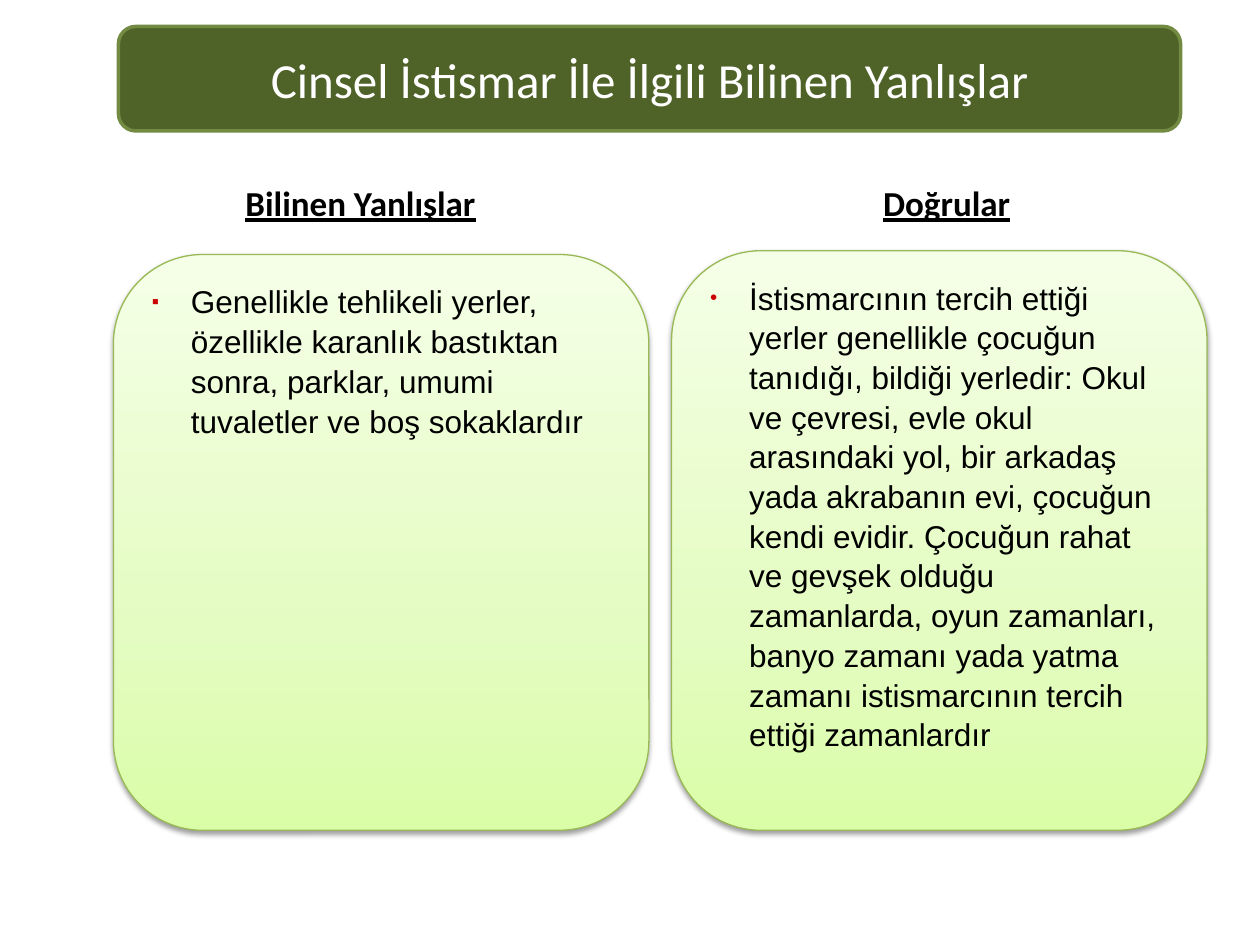
from pptx import Presentation
from pptx.dml.color import RGBColor
from pptx.enum.shapes import MSO_SHAPE as Shape
from pptx.enum.text import MSO_ANCHOR as Anchor, MSO_AUTO_SIZE as AutoSize, PP_ALIGN as Align
from pptx.oxml import parse_xml
from pptx.oxml.ns import nsdecls, qn
from pptx.util import Inches, Pt

COLORS = {
    "title_fill": "4F6228", "title_line": "738A42", "panel_line": "98B955",
    "white": "FFFFFF", "black": "000000", "bullet": "CC0000",
}
PANEL_STOPS = [(0, "DAFDA7"), (35, "E4FCC2"), (100, "F5FFE7")]


def rgb(name):
    return RGBColor.from_string(COLORS[name])


def write(shape, text, font_name, size, color):
    """Set the shape's single paragraph, format its run and return the paragraph."""
    shape.text_frame.text = text
    paragraph = shape.text_frame.paragraphs[0]
    font = paragraph.runs[0].font
    font.name, font.size = font_name, Pt(size)
    font.color.rgb = rgb(color)
    return paragraph


presentation = Presentation()
presentation.slide_width, presentation.slide_height = Inches(10), Inches(7.5)
slide = presentation.slides.add_slide(presentation.slide_layouts[6])

# Title bar
title = slide.shapes.add_shape(
    Shape.ROUNDED_RECTANGLE, Inches(0.94), Inches(0.21), Inches(8.43), Inches(0.83))
title.shadow.inherit = False
title.fill.solid()
title.fill.fore_color.rgb = rgb("title_fill")
title.line.color.rgb = rgb("title_line")
title.line.width = Pt(2)
title.text_frame.vertical_anchor = Anchor.MIDDLE
paragraph = write(title, "Cinsel İstismar İle İlgili Bilinen Yanlışlar", "Calibri", 28, "white")
paragraph.alignment = Align.CENTER

# Panels: left, top, height, bullet, space before the text, text
panels = [
    (0.9, 2.02, 4.57, "▪", 6,
     "Genellikle tehlikeli yerler, özellikle karanlık bastıktan sonra, parklar, "
     "umumi tuvaletler ve boş sokaklardır"),
    (5.33, 1.99, 4.6, "•", 3,
     "İstismarcının tercih ettiği yerler genellikle çocuğun tanıdığı, bildiği yerledir: "
     "Okul ve çevresi, evle okul arasındaki yol, bir arkadaş yada akrabanın evi, çocuğun "
     "kendi evidir. Çocuğun rahat ve gevşek olduğu zamanlarda, oyun zamanları, banyo "
     "zamanı yada yatma zamanı istismarcının tercih ettiği zamanlardır"),
]
for left, top, height, bullet, space_before, text in panels:
    panel = slide.shapes.add_shape(
        Shape.ROUNDED_RECTANGLE, Inches(left), Inches(top), Inches(4.25), Inches(height))
    panel.line.color.rgb = rgb("panel_line")
    panel.line.width = Pt(0.75)

    panel.fill.gradient()
    panel.fill.gradient_angle = 90
    stop_list = panel._element.spPr.find(qn("a:gradFill")).find(qn("a:gsLst"))
    for stop in list(stop_list):
        stop_list.remove(stop)
    for position, color in PANEL_STOPS:
        stop_list.append(parse_xml(
            f'<a:gs {nsdecls("a")} pos="{position * 1000}"><a:srgbClr val="{color}"/></a:gs>'))

    panel.shadow.inherit = False
    panel._element.spPr.find(qn("a:effectLst")).append(parse_xml(
        f'<a:outerShdw {nsdecls("a")} blurRad="{Pt(3.1)}" dist="{Pt(1.6)}" dir="5400000" '
        f'rotWithShape="0"><a:srgbClr val="{COLORS["black"]}"><a:alpha val="38000"/>'
        '</a:srgbClr></a:outerShdw>'))

    panel.text_frame.vertical_anchor = Anchor.TOP
    panel.text_frame.margin_top = 0
    paragraph = write(panel, text, "Arial", 18, "black")
    paragraph.alignment = Align.LEFT
    paragraph.line_spacing = 1.05
    paragraph.space_before = Pt(space_before)
    properties = paragraph._p.get_or_add_pPr()
    properties.set("marL", str(Inches(0.31)))
    properties.set("indent", str(-Inches(0.31)))
    for markup in (
        f'<a:buClr {nsdecls("a")}><a:srgbClr val="{COLORS["bullet"]}"/></a:buClr>',
        f'<a:buSzPct {nsdecls("a")} val="65000"/>',
        f'<a:buFont {nsdecls("a")} typeface="Arial"/>',
        f'<a:buChar {nsdecls("a")} char="{bullet}"/>',
    ):
        properties.append(parse_xml(markup))

# Column headings
for left, width, text in [(1.85, 2.04, "Bilinen Yanlışlar"), (6.91, 1.22, "Doğrular")]:
    heading = slide.shapes.add_textbox(Inches(left), Inches(1.39), Inches(width), Inches(0.44))
    heading.text_frame.word_wrap = False
    heading.text_frame.auto_size = AutoSize.SHAPE_TO_FIT_TEXT
    font = write(heading, text, "Calibri", 20, "black").runs[0].font
    font.bold = font.underline = True

presentation.save("out.pptx")
